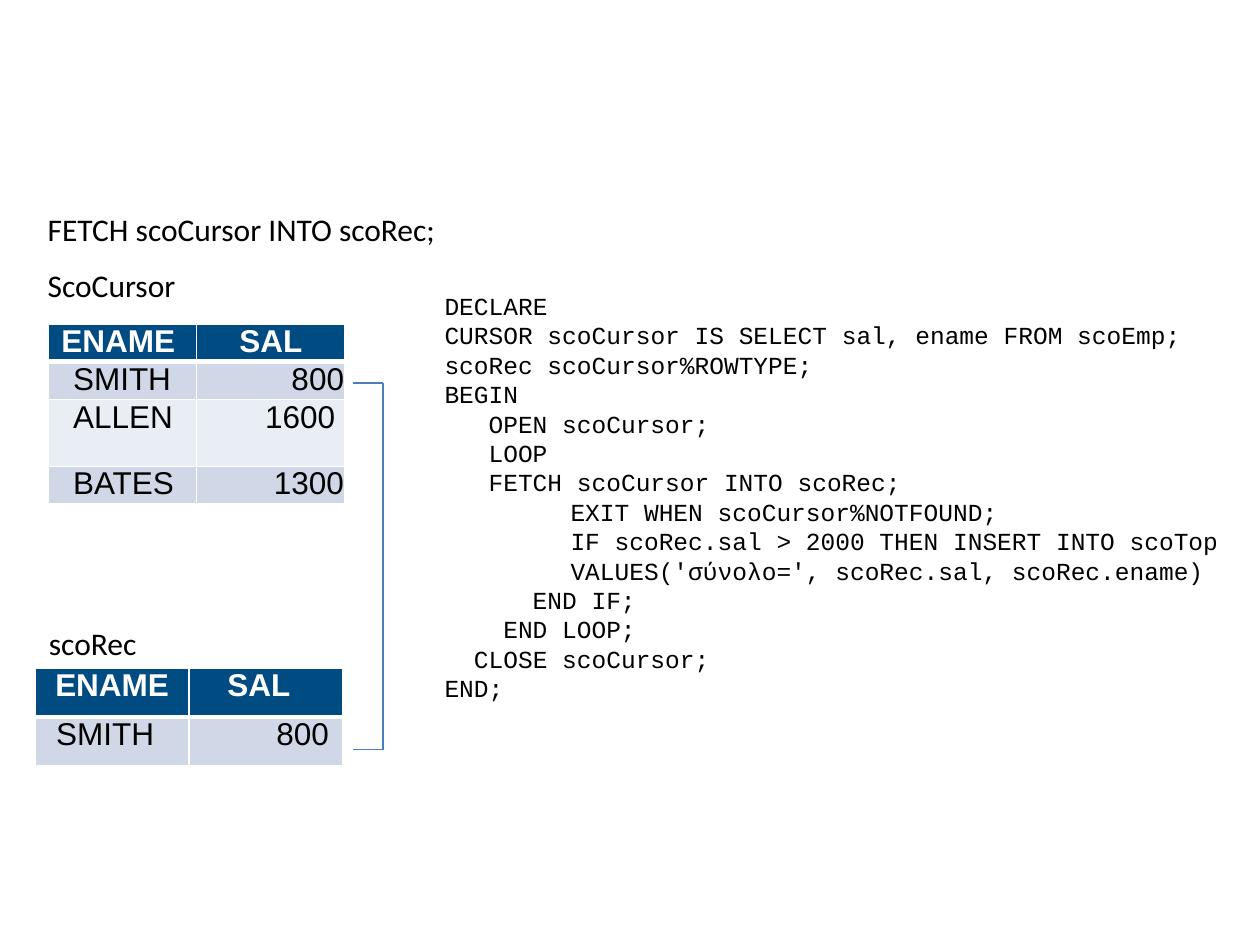
from pptx import Presentation
from pptx.dml.color import RGBColor
from pptx.enum.shapes import MSO_CONNECTOR
from pptx.enum.text import MSO_AUTO_SIZE, PP_ALIGN
from pptx.oxml.ns import qn
from pptx.util import Inches, Pt
from lxml.etree import SubElement

COLORS = {"text": "000000", "white": "FFFFFF", "header": "004B82",
          "band1": "D0D8E8", "band2": "E9EDF4", "line": "4B7EBC"}
LEFT, CENTER, RIGHT = PP_ALIGN.LEFT, PP_ALIGN.CENTER, PP_ALIGN.RIGHT

# Content: labels as text, box and paragraph format
LABELS = [
    ("FETCH scoCursor INTO scoRec;", (0.28, 1.62, 3.31, 0.4), {}),
    ("ScoCursor", (0.28, 2.06, 1.23, 0.4), {}),
    ("scoRec", (0.29, 5.01, 0.93, 0.3),
     {"line_spacing": Pt(14), "space_after": Pt(5.7)}),
]

# Cells as text, alignment, left inset, right inset
TABLES = [
    {"at": (0.38, 2.57), "col": 1.18, "rows": (0.3, 0.3, 0.53, 0.3), "cells": [
        [("ENAME", RIGHT, 0, 0.17), ("SAL", CENTER, 0, 0)],
        [("SMITH", LEFT, 0.2, 0), ("800", RIGHT, 0, 0.01)],
        [("ALLEN", LEFT, 0.2, 0), ("1600", RIGHT, 0, 0.08)],
        [("BATES", LEFT, 0.2, 0), ("1300", RIGHT, 0, 0.01)]]},
    {"at": (0.28, 5.3), "col": 1.22, "rows": (0.39, 0.39), "cells": [
        [("ENAME", CENTER, 0, 0), ("SAL", CENTER, 0, 0.11)],
        [("SMITH", CENTER, 0, 0.11), ("800", RIGHT, 0, 0.11)]]},
]

# Code lines as indent in characters and text
CODE_BOX = (3.43, 2.26, 6.57, 3.4)
CHAR = 0.6 * 14  # Courier New advance in points
TAB = 72 / CHAR  # one inch in characters
CODE = [
    (0, "DECLARE"),
    (0, "CURSOR scoCursor IS SELECT sal, ename FROM scoEmp; "
        "scoRec scoCursor%ROWTYPE;"),
    (0, "BEGIN"),
    (3, "OPEN scoCursor;"),
    (3, "LOOP"),
    (3, "FETCH scoCursor INTO scoRec;"),
    (TAB, "EXIT WHEN scoCursor%NOTFOUND;"),
    (TAB, "IF scoRec.sal > 2000 THEN INSERT INTO scoTop"),
    (TAB, "VALUES('σύνολο=', scoRec.sal, scoRec.ename)"),
    (6, "END IF;"),
    (4, "END LOOP;"),
    (2, "CLOSE scoCursor;"),
    (0, "END;"),
]

# Bracket joining the fetched row to the record
BRACKET = {"left": 2.8, "right": 3.04, "top": 3.04, "bottom": 5.95}


def rgb(name):
    return RGBColor.from_string(COLORS[name])


def write(p, text, font, size, color="text", bold=False, **fmt):
    for key, value in fmt.items():
        setattr(p, key, value)
    r = p.add_run()
    r.text = text
    for key, value in {"name": font, "size": Pt(size), "bold": bold}.items():
        setattr(r.font, key, value)
    r.font.color.rgb = rgb(color)


def text_frame(s, box, wrap):
    tf = s.shapes.add_textbox(*map(Inches, box)).text_frame
    tf.word_wrap = wrap
    tf.auto_size = MSO_AUTO_SIZE.SHAPE_TO_FIT_TEXT
    return tf


def add_borders(cell, widths):
    tcPr = cell._tc.get_or_add_tcPr()
    for i, (side, width) in enumerate(widths.items()):
        ln = SubElement(tcPr, qn(f"a:{side}"), w=str(Pt(width)))
        fill = SubElement(ln, qn("a:solidFill"))
        SubElement(fill, qn("a:srgbClr"), val=COLORS["white"])
        tcPr.insert(i, ln)  # borders come before the cell fill


def add_data_table(s, data):
    rows, cols = data["cells"], len(data["cells"][0])
    table = s.shapes.add_table(
        len(rows), cols, *map(Inches, data["at"]),
        Inches(cols * data["col"]), Inches(sum(data["rows"]))).table
    for col in table.columns:
        col.width = Inches(data["col"])
    for i, row in enumerate(rows):
        table.rows[i].height = Inches(data["rows"][i])
        head = i == 0
        for j, (text, align, left, right) in enumerate(row):
            cell = table.cell(i, j)
            insets = {"margin_left": left, "margin_right": right,
                      "margin_top": 0, "margin_bottom": 0}
            for key, value in insets.items():
                setattr(cell, key, Inches(value))
            cell.fill.solid()
            cell.fill.fore_color.rgb = rgb(
                "header" if head else "band1" if i % 2 else "band2")
            add_borders(cell, {"lnL": 1, "lnR": 1, "lnT": 3 if i == 1 else 1,
                               "lnB": 3 if head else 1})
            write(cell.text_frame.paragraphs[0], text, "Arial", 18,
                  "white" if head else "text", head, alignment=align)


def add_bracket(s, left, right, top, bottom):
    group = s.shapes.add_group_shape()
    for ends in ((right, top, right, bottom), (right, top, left, top),
                 (right, bottom, left, bottom)):
        line = group.shapes.add_connector(
            MSO_CONNECTOR.STRAIGHT, *map(Inches, ends))
        line.line.color.rgb = rgb("line")
        line.line.width = Pt(0.75)
        SubElement(line._element.spPr, qn("a:effectLst"))


def main():
    prs = Presentation()
    prs.slide_width, prs.slide_height = Inches(10), Inches(7.5)
    s = prs.slides.add_slide(prs.slide_layouts[6])

    for text, box, fmt in LABELS:
        tf = text_frame(s, box, False)
        write(tf.paragraphs[0], text, "Calibri", 18, **fmt)
    for data in TABLES:
        add_data_table(s, data)
    add_bracket(s, **BRACKET)

    # Code listing
    tf = text_frame(s, CODE_BOX, True)
    for i, (indent, text) in enumerate(CODE):
        p = tf.add_paragraph() if i else tf.paragraphs[0]
        write(p, text, "Courier New", 14)
        pPr = p._p.get_or_add_pPr()
        pPr.set("marL", str(Pt(indent * CHAR)))
        pPr.set("indent", "0")

    prs.save("out.pptx")


if __name__ == "__main__":
    main()
